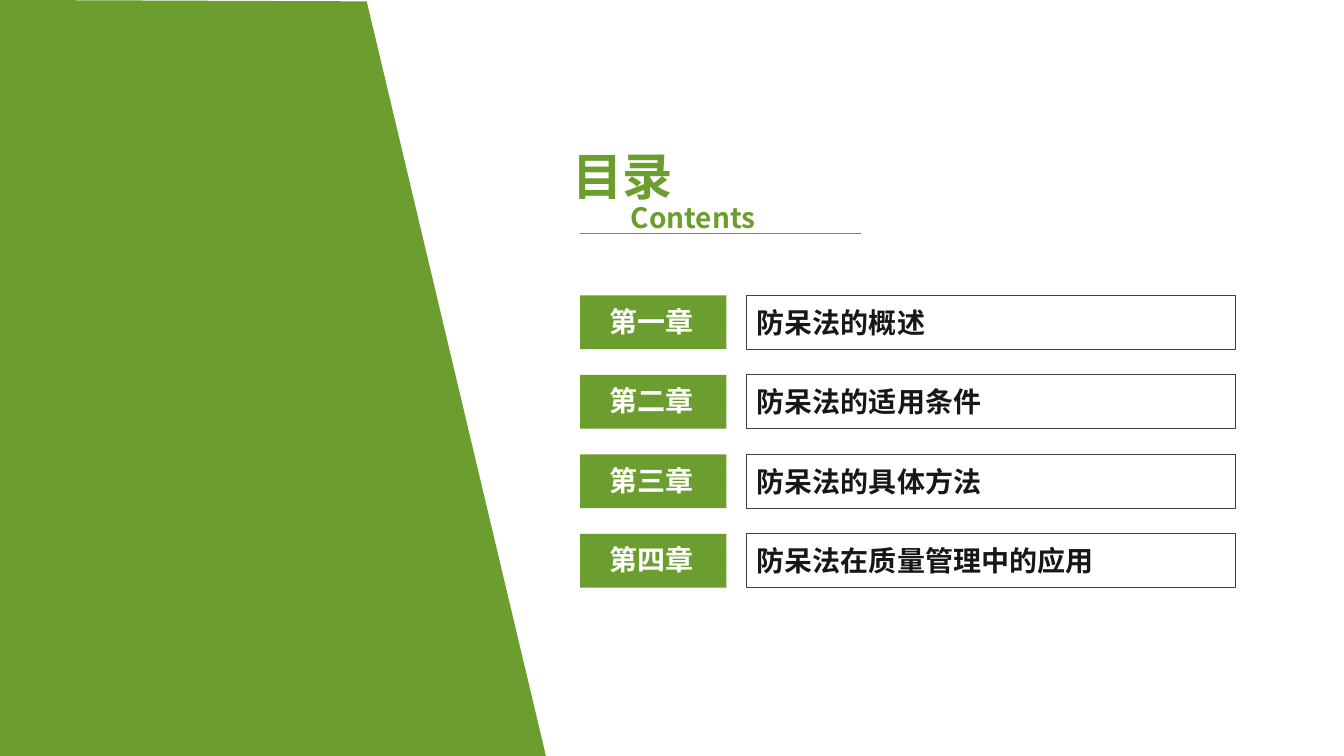
"""Build a contents slide with four chapter rows beside a green panel."""
import pptx
import pptx.dml.color
import pptx.enum.shapes
import pptx.oxml
import pptx.oxml.ns
import pptx.util

Pt = pptx.util.Pt
FONT = "Noto Sans CJK SC"
GREEN, WHITE, INK = "6C9D2F", "FFFFFF", "181717"
EDGE, RULE = "404040", "7F7F7F"

HEADS = [
    ("目录", 36, (401.8, 100.1, 113, 51)),
    ("Contents", 20, (443.5, 139.7, 113, 31.7)),
]
ROWS = [
    ("第一章", "防呆法的概述"),
    ("第二章", "防呆法的适用条件"),
    ("第三章", "防呆法的具体方法"),
    ("第四章", "防呆法在质量管理中的应用"),
]
PANEL = [(262.1, 0.7), (0, 0), (0, 540), (389.5, 540)]
TOP, STEP, HIGH = 211, 56.8, 38.4
TAG_X, TAG_W = 414.4, 104.4
BOX_X, BOX_W = 533.5, 348.7


def paint(part, color):
    part.fore_color.rgb = pptx.dml.color.RGBColor.from_string(color)


def style(shape, fill=None, line=None):
    shape.shadow.inherit = False
    if fill:
        shape.fill.solid()
        paint(shape.fill, fill)
    else:
        shape.fill.background()
    if line:
        shape.line.fill.solid()
        paint(shape.line.fill, line)
        shape.line.width = Pt(0.75)
    else:
        shape.line.fill.background()


def rect(slide, box, fill=None, line=None):
    kind = pptx.enum.shapes.MSO_SHAPE.RECTANGLE
    style(slide.shapes.add_shape(kind, *map(Pt, box)), fill, line)


def text(slide, words, box, size, color):
    frame = slide.shapes.add_textbox(*map(Pt, box)).text_frame
    frame.word_wrap = True
    frame.text = words
    run = frame.paragraphs[0].runs[0]
    font = run.font
    font.size, font.bold, font.name = Pt(size), True, FONT
    font.fill.solid()
    paint(font.fill, color)
    east = pptx.oxml.parse_xml(
        f'<a:ea {pptx.oxml.ns.nsdecls("a")} typeface="{FONT}"/>')
    run._r.get_or_add_rPr().find(pptx.oxml.ns.qn("a:latin")).addnext(east)


def rule(slide, left, right, y):
    kind = pptx.enum.shapes.MSO_CONNECTOR.STRAIGHT
    line = slide.shapes.add_connector(kind, Pt(left), Pt(y), Pt(right), Pt(y))
    line.line.fill.solid()
    paint(line.line.fill, RULE)
    line.line.width = Pt(0.5)
    line._element.spPr.append(pptx.oxml.parse_xml(
        f'<a:effectLst {pptx.oxml.ns.nsdecls("a")}/>'))


def main():
    deck = pptx.Presentation()
    deck.slide_width, deck.slide_height = Pt(960), Pt(540)
    slide = deck.slides.add_slide(deck.slide_layouts[6])

    pen = slide.shapes.build_freeform(*PANEL[0], scale=Pt(1))
    pen.add_line_segments(PANEL[1:], close=True)
    style(pen.convert_to_shape(), GREEN)

    for i, (tag, title) in enumerate(ROWS):
        y = TOP + i * STEP
        rect(slide, (BOX_X, y, BOX_W, HIGH), line=EDGE)
        text(slide, title, (BOX_X, y + 3.4, BOX_W, 31.7), 20, INK)
        rect(slide, (TAG_X, y, TAG_W, HIGH), fill=GREEN)
        text(slide, tag, (428.4, y + 2.8, 76, 31.7), 20, WHITE)

    for words, size, box in HEADS:
        text(slide, words, box, size, GREEN)
    rule(slide, 414, 614.9, 167)
    deck.save("out.pptx")


if __name__ == "__main__":
    main()
